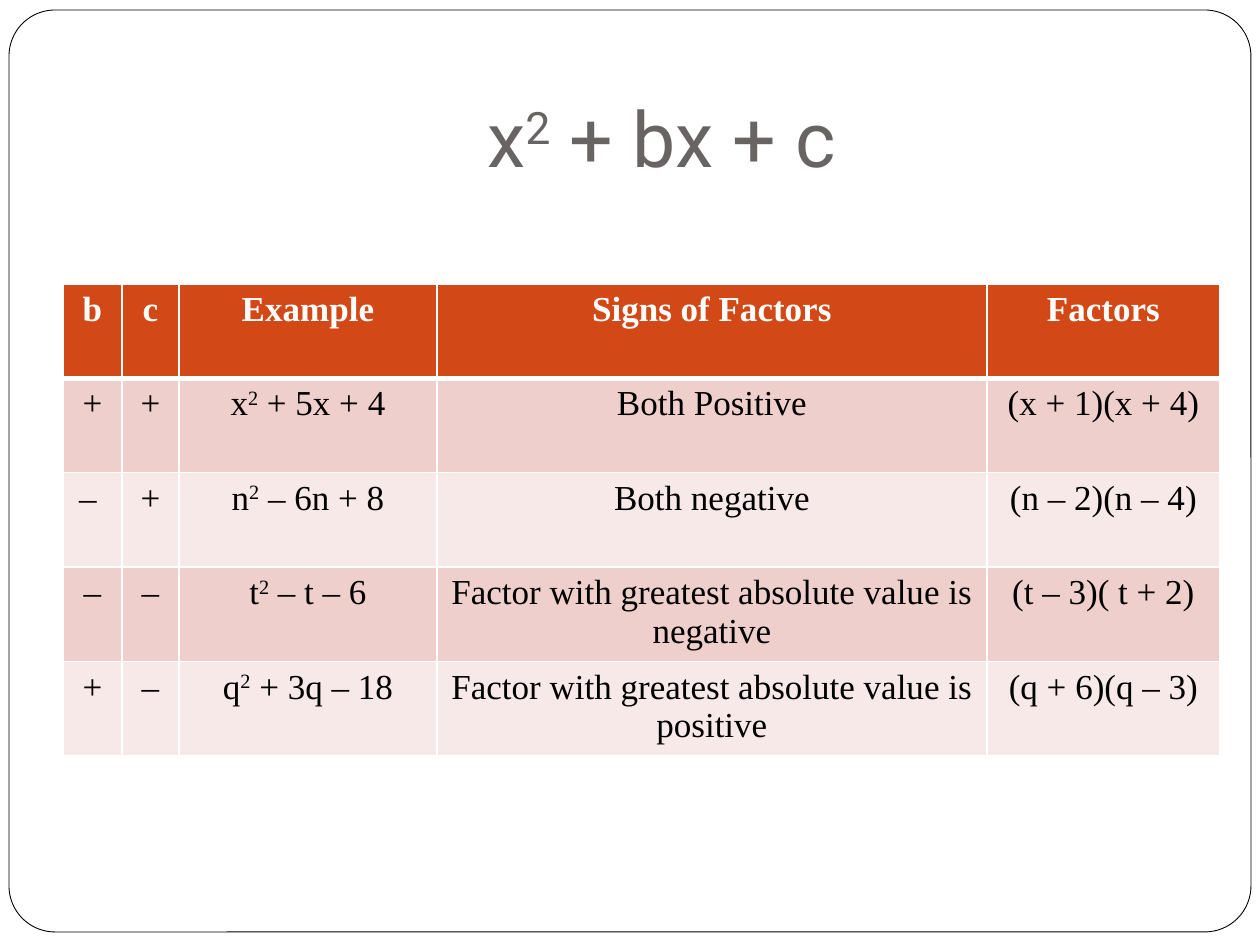
from dataclasses import dataclass

from lxml.etree import SubElement
from pptx import Presentation
from pptx.dml.color import RGBColor
from pptx.enum.shapes import MSO_SHAPE as Shape
from pptx.enum.text import MSO_ANCHOR as Anchor, PP_ALIGN as Align
from pptx.oxml.ns import qn
from pptx.util import Emu, Pt

EMU_PER_PX = 914400 / 126

WHITE = RGBColor(0xFF, 0xFF, 0xFF)
BLACK = RGBColor(0x00, 0x00, 0x00)
TITLE_GREY = RGBColor(0x69, 0x64, 0x64)
HEADER_ORANGE = RGBColor(0xD3, 0x48, 0x17)
BAND_DARK = RGBColor(0xEF, 0xCF, 0xCC)
BAND_LIGHT = RGBColor(0xF7, 0xE9, 0xE8)

TITLE_FONT = {"name": "Roboto", "size": Pt(44), "bold": False}
CELL_FONT = {"name": "Times New Roman", "size": Pt(20)}


@dataclass(frozen=True)
class Box:
    left: int
    top: int
    width: int
    height: int


@dataclass(frozen=True)
class SignRule:
    b: str
    c: str
    example: str
    signs: str
    factors: str

    def texts(self) -> tuple:
        return self.b, self.c, self.example, self.signs, self.factors


FRAME = Box(9, 10, 1242, 922)
TITLE = Box(126, 38, 1071, 158)
TABLE = Box(63, 284, 1157, 472)
COLUMN_WIDTHS = (59, 57, 258, 550, 233)

# A caret marks the next character as superscript
HEADER = SignRule("b", "c", "Example", "Signs of Factors", "Factors")
RULES = (
    SignRule("+", "+", "x^2 + 5x + 4", "Both Positive", "(x + 1)(x + 4)"),
    SignRule("–", "+", "n^2 – 6n + 8", "Both negative", "(n – 2)(n – 4)"),
    SignRule("–", "–", "t^2 – t – 6",
             "Factor with greatest absolute value is negative", "(t – 3)( t + 2)"),
    SignRule("+", "–", "q^2 + 3q – 18",
             "Factor with greatest absolute value is positive", "(q + 6)(q – 3)"),
)


def px(length: int) -> Emu:
    return Emu(round(length * EMU_PER_PX))


def bounds(box: Box) -> tuple:
    return px(box.left), px(box.top), px(box.width), px(box.height)


def add_run(paragraph, text: str, font: dict, color: RGBColor, raised: bool = False) -> None:
    run = paragraph.add_run()
    run.text = text
    for name, value in font.items():
        setattr(run.font, name, value)
    run.font.color.rgb = color
    if raised:
        run._r.get_or_add_rPr().set("baseline", "30000")


def write_formula(text_frame, text: str, font: dict, color: RGBColor) -> None:
    paragraph = text_frame.paragraphs[0]
    paragraph.alignment = Align.CENTER
    base, caret, rest = text.partition("^")
    add_run(paragraph, base, font, color)
    if caret:
        add_run(paragraph, rest[0], font, color, raised=True)
        add_run(paragraph, rest[1:], font, color)


def set_borders(cell, bottom: float = 1) -> None:
    properties = cell._tc.get_or_add_tcPr()
    for tag, width in (("lnL", 1), ("lnR", 1), ("lnT", 1), ("lnB", bottom)):
        line = SubElement(properties, qn(f"a:{tag}"), w=str(Pt(width)))
        fill = SubElement(line, qn("a:solidFill"))
        SubElement(fill, qn("a:srgbClr"), val=str(WHITE))


def add_title(slide) -> None:
    title = slide.shapes.title
    title.left, title.top, title.width, title.height = bounds(TITLE)
    frame_format = {
        "vertical_anchor": Anchor.BOTTOM, "word_wrap": True,
        "margin_left": px(13), "margin_right": px(13),
        "margin_top": px(6), "margin_bottom": px(13),
    }
    for name, value in frame_format.items():
        setattr(title.text_frame, name, value)
    write_formula(title.text_frame, "x^2 + bx + c", TITLE_FONT, TITLE_GREY)


def add_frame(slide) -> None:
    frame = slide.shapes.add_shape(Shape.ROUNDED_RECTANGLE, *bounds(FRAME))
    frame.adjustments[0] = 0.05
    frame.shadow.inherit = False
    frame.fill.solid()
    frame.fill.fore_color.rgb = WHITE
    frame.line.color.rgb = BLACK
    frame.line.width = Pt(0.5)
    # The frame belongs behind the title
    slide.shapes.title.element.addprevious(frame.element)


def add_sign_table(slide) -> None:
    rows = (HEADER, *RULES)
    table = slide.shapes.add_table(len(rows), len(COLUMN_WIDTHS), *bounds(TABLE)).table
    for column, width in zip(table.columns, COLUMN_WIDTHS):
        column.width = px(width)
    for row_index, rule in enumerate(rows):
        is_header = row_index == 0
        band = BAND_DARK if row_index % 2 else BAND_LIGHT
        next_is_body = row_index == 1
        font = {**CELL_FONT, "bold": is_header}
        for column_index, text in enumerate(rule.texts()):
            cell = table.cell(row_index, column_index)
            set_borders(cell, bottom=3 if is_header else 1)
            if next_is_body:
                # Shared edge with the header keeps the header's thick line
                cell._tc.tcPr.find(qn("a:lnT")).set("w", str(Pt(3)))
            cell.fill.solid()
            cell.fill.fore_color.rgb = HEADER_ORANGE if is_header else band
            write_formula(cell.text_frame, text, font, WHITE if is_header else BLACK)
    # The first minus sign sits a little left of centre
    table.cell(2, 0).margin_right = px(22)


def main() -> None:
    presentation = Presentation()
    presentation.slide_width, presentation.slide_height = px(1260), px(945)
    slide = presentation.slides.add_slide(presentation.slide_layouts[5])
    add_title(slide)
    add_frame(slide)
    add_sign_table(slide)
    presentation.save("out.pptx")


if __name__ == "__main__":
    main()
